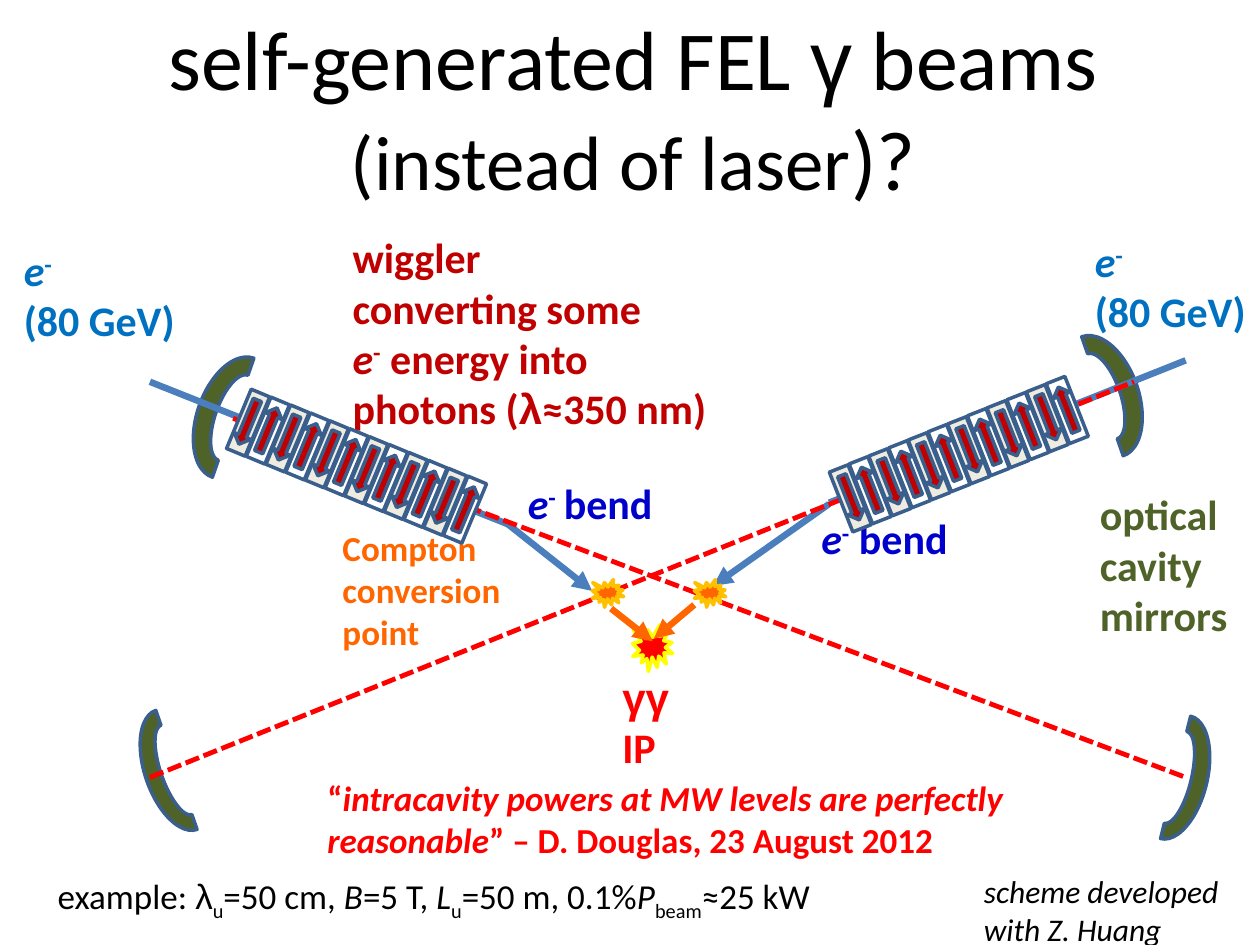
from dataclasses import dataclass, replace
from typing import Optional

from pptx import Presentation
from pptx.dml.color import RGBColor
from pptx.enum.dml import MSO_LINE
from pptx.enum.shapes import MSO_CONNECTOR, MSO_SHAPE as Preset
from pptx.enum.text import MSO_AUTO_SIZE, PP_ALIGN as Align
from pptx.oxml.ns import qn
from pptx.util import Inches, Pt
from lxml.etree import SubElement

COLORS = {
    "black": "000000", "white": "FFFFFF", "cream": "EEECE1", "outline": "3A5F8C",
    "olive": "4F6228", "beam": "4B7EBC", "red": "FF0000", "orange": "FF6600",
    "gold": "FFC000", "yellow": "FFFF00", "crimson": "C00000", "electron": "0070C0",
    "bend": "0000CC",
}


@dataclass
class Run:
    text: str
    italic: bool = False
    baseline: int = 0
    font: str = "Calibri"
    size: Optional[float] = None


@dataclass
class Label:
    box: tuple
    size: float
    color: str
    paragraphs: list
    bold: bool = True
    wrap: bool = False
    align: Align = Align.LEFT


@dataclass
class Solid:
    preset: Preset
    box: tuple
    fill: str
    line: str = "outline"
    rotation: float = 0
    flip_vertical: bool = False


@dataclass
class Line:
    start: tuple
    end: tuple
    color: str
    width: float = 3.75
    arrow: bool = False
    dashed: bool = False


@dataclass
class Wiggler:
    left: float
    top: float
    rise: float
    rotation: float


def greek(text: str) -> Run:
    return Run(text, font="Arial")


def symbol(text: str) -> Run:
    return Run(text, italic=True)


def subscript(text: str) -> Run:
    return Run(text, baseline=-25)


ELECTRON = [symbol("e"), Run("-", baseline=30)]
ENERGY = Label((0.09, 1.89, 1.41, 0.91), 24, "electron", [ELECTRON, [Run("(80 GeV)")]])
BEND = Label((4.09, 3.74, 1.25, 0.5), 24, "bend",
             [[*ELECTRON, Run(" ", size=20), Run("bend")]])

LABELS = [
    Label((0.95, 0, 8.15, 1.72), 48, "black",
          [[Run("self-generated FEL "), greek("γ"), Run(" beams")],
           [Run("(instead of laser", size=44), Run(")?")]],
          bold=False, align=Align.CENTER),
    Label((8.63, 3.83, 1.22, 1.72), 24, "olive",
          [[Run("optical")], [Run("cavity")], [Run("mirrors")]]),
    Label((2.7, 1.79, 3.03, 2.12), 24, "crimson",
          [[Run("wiggler")], [Run("converting some")],
           [*ELECTRON, Run(" energy into")],
           [Run("photons ("), greek("λ"), Run("≈350 nm)")]]),
    ENERGY,
    replace(ENERGY, box=(8.59, 1.82, 1.41, 0.91)),
    Label((2.62, 4.13, 1.47, 1.11), 20, "orange",
          [[Run("Compton")], [Run("conversion")], [Run("point")]]),
    Label((4.84, 5.28, 0.82, 0.5), 24, "red", [[greek("γγ"), Run(" IP")]], wrap=True),
    replace(BEND, box=(6.42, 4.02, 1.26, 0.5), paragraphs=[[*ELECTRON, Run(" bend")]]),
    BEND,
    Label((0.36, 6.89, 6.31, 0.44), 20, "black",
          [[Run("example: "), greek("λ"), subscript("u"), Run("=50 cm, "), symbol("B"),
            Run("=5 T, "), symbol("L"), subscript("u"), Run("=50 m, 0.1%"),
            symbol("P"), subscript("beam"), Run("≈25 kW")]], bold=False),
    Label((2.5, 6.11, 6.09, 0.77), 20, "red",
          [[Run("“"), symbol("intracavity powers at MW levels are perfectly reasonable"),
            Run("” – D. Douglas, 23 August 2012")]], wrap=True),
    Label((7.71, 6.87, 2.19, 0.71), 18, "black",
          [[symbol("scheme developed")], [symbol("with Z. Huang")]], bold=False),
]

MIRRORS = [
    Solid(Preset.BLOCK_ARC, box, "olive", rotation=rotation)
    for box, rotation in [
        ((0.9, 5.86, 1, 0.5), 250.9), ((8.25, 2.86, 1, 0.57), 70.8),
        ((8.83, 5.92, 1, 0.5), 103.8), ((1.35, 3.03, 1, 0.57), 289.2),
    ]
]

BEAMS = [
    Line((9.41, 2.86), (6.58, 3.99), "beam"),
    Line((6.58, 4), (5.66, 4.65), "beam", arrow=True),
    Line((1.19, 3.03), (4.03, 4.16), "beam"),
    Line((4.03, 4.16), (4.7, 4.69), "beam", arrow=True),
    Line((1.19, 6.17), (9, 3.03), "red", 2.75, dashed=True),
    Line((1.85, 3.32), (9.41, 6.17), "red", 2.75, dashed=True),
]

COLLISIONS = [
    Solid(Preset.EXPLOSION1, (4.7, 4.6, 0.25, 0.22), "orange", "gold"),
    Solid(Preset.EXPLOSION1, (5.51, 4.6, 0.25, 0.22), "orange", "gold"),
    Solid(Preset.EXPLOSION1, (5.02, 4.96, 0.32, 0.37), "red", "yellow"),
]

PHOTONS = [
    Line((4.85, 4.83), (5.18, 5.09), "orange", arrow=True),
    Line((5.51, 4.8), (5.19, 5.07), "orange", arrow=True),
]

WIGGLERS = [Wiggler(1.89, 3.1, 0.69, 22.6), Wiggler(6.67, 3.7, -0.7, 338.5)]
MAGNET_COUNT = 12
WIGGLER_RUN = 1.72


def rgb(name: str) -> RGBColor:
    return RGBColor.from_string(COLORS[name])


def draw_solid(shapes, solid: Solid) -> None:
    shape = shapes.add_shape(solid.preset, *map(Inches, solid.box))
    shape.shadow.inherit = False
    shape.rotation = solid.rotation
    shape.fill.solid()
    shape.fill.fore_color.rgb = rgb(solid.fill)
    shape.line.color.rgb = rgb(solid.line)
    shape.line.width = Pt(2)
    if solid.flip_vertical:
        shape._element.spPr.find(qn("a:xfrm")).set("flipV", "1")


def draw_line(shapes, line: Line) -> None:
    connector = shapes.add_connector(
        MSO_CONNECTOR.STRAIGHT, *map(Inches, line.start + line.end))
    connector.line.color.rgb = rgb(line.color)
    connector.line.width = Pt(line.width)
    if line.dashed:
        connector.line.dash_style = MSO_LINE.SQUARE_DOT
    properties = connector._element.spPr
    if line.arrow:
        SubElement(properties.find(qn("a:ln")), qn("a:tailEnd"), type="triangle")
    SubElement(properties, qn("a:effectLst"))


def draw_label(shapes, label: Label) -> None:
    frame = shapes.add_textbox(*map(Inches, label.box)).text_frame
    frame.word_wrap = label.wrap
    frame.auto_size = MSO_AUTO_SIZE.SHAPE_TO_FIT_TEXT
    for index, runs in enumerate(label.paragraphs):
        paragraph = frame.add_paragraph() if index else frame.paragraphs[0]
        paragraph.alignment = label.align
        for item in runs:
            run = paragraph.add_run()
            run.text = item.text
            run.font.name = item.font
            run.font.size = Pt(item.size or label.size)
            run.font.bold = label.bold
            run.font.italic = item.italic
            run.font.color.rgb = rgb(label.color)
            if item.baseline:
                run._r.get_or_add_rPr().set("baseline", str(item.baseline * 1000))


def draw_wiggler(shapes, wiggler: Wiggler) -> None:
    """Draw a row of tilted magnets whose field arrows alternate in direction."""
    group = shapes.add_group_shape()
    for index in range(MAGNET_COUNT):
        share = index / (MAGNET_COUNT - 1)
        left = wiggler.left + WIGGLER_RUN * share
        top = wiggler.top + wiggler.rise * share
        flipped = index % 2 == 1
        draw_solid(group.shapes, Solid(
            Preset.RECTANGLE, (left, top, 0.16, 0.51), "white" if flipped else "cream",
            rotation=wiggler.rotation, flip_vertical=flipped))
        draw_solid(group.shapes, Solid(
            Preset.DOWN_ARROW, (left + 0.01, top + 0.06, 0.14, 0.38), "crimson",
            rotation=wiggler.rotation, flip_vertical=flipped))


def main() -> None:
    presentation = Presentation()
    presentation.slide_width = Inches(10)
    presentation.slide_height = Inches(7.5)
    shapes = presentation.slides.add_slide(presentation.slide_layouts[6]).shapes
    for draw, items in [
        (draw_solid, MIRRORS), (draw_line, BEAMS), (draw_solid, COLLISIONS),
        (draw_line, PHOTONS), (draw_label, LABELS), (draw_wiggler, WIGGLERS),
    ]:
        for item in items:
            draw(shapes, item)
    presentation.save("out.pptx")


if __name__ == "__main__":
    main()
